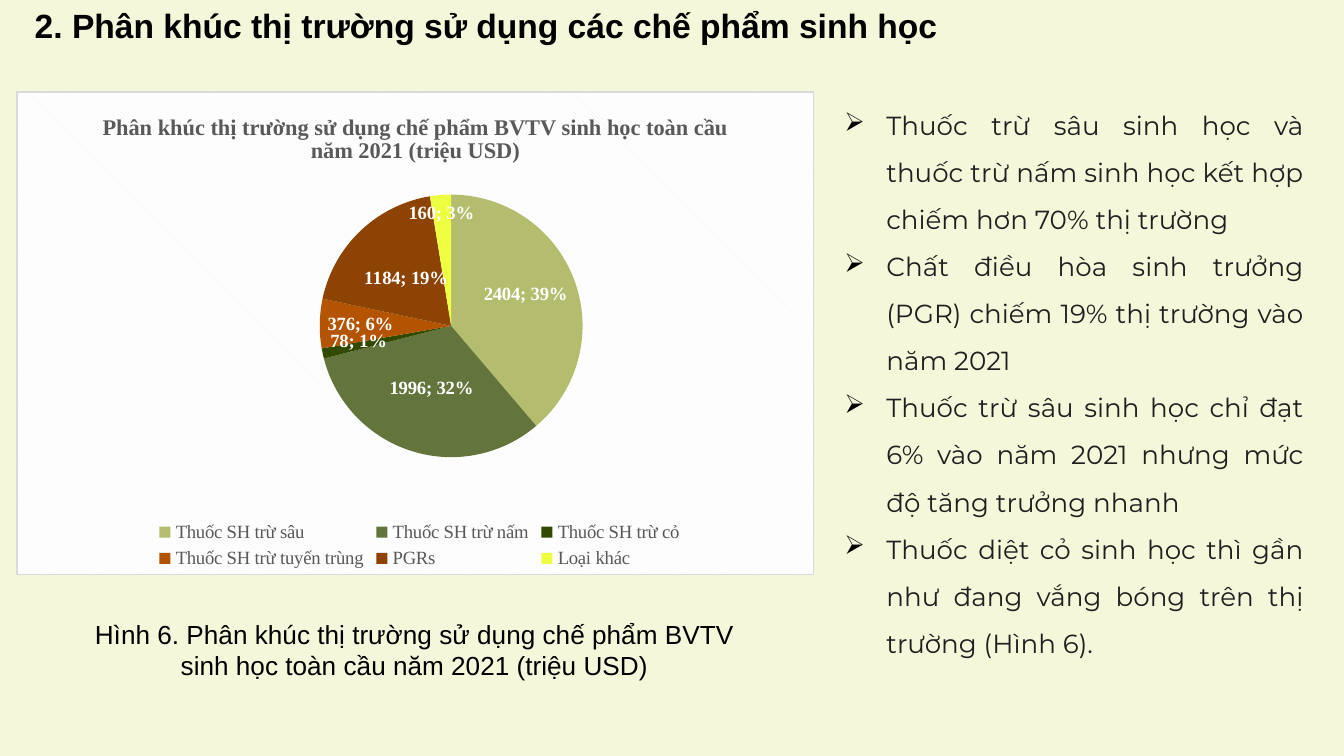
from lxml import etree
from pptx import Presentation
from pptx import util as u
from pptx.chart.data import CategoryChartData
from pptx.dml.color import RGBColor
from pptx.enum import chart as charts
from pptx.enum import text
from pptx.oxml import parse_xml
from pptx.oxml.ns import nsdecls, qn

SERIF = "Times New Roman"
SEGMENTS = [
    ("Thuốc SH trừ sâu", 2404, "B4BD6E"),
    ("Thuốc SH trừ nấm", 1996, "63753C"),
    ("Thuốc SH trừ cỏ", 78, "324A00"),
    ("Thuốc SH trừ tuyến trùng", 376, "B45400"),
    ("PGRs", 1184, "8C4303"),
    ("Loại khác", 160, "EEFF41"),
]
CENTRED_LABELS = (1, 4)
FINDINGS = [
    "Thuốc trừ sâu sinh học và thuốc trừ nấm sinh học kết hợp chiếm hơn 70% thị trường",
    "Chất điều hòa sinh trưởng (PGR) chiếm 19% thị trường vào năm 2021",
    "Thuốc trừ sâu sinh học chỉ đạt 6% vào năm 2021 nhưng mức độ tăng trưởng nhanh",
    "Thuốc diệt cỏ sinh học thì gần như đang vắng bóng trên thị trường (Hình 6).",
]


def colour(value):
    """Turn a hex string into a colour."""
    return RGBColor.from_string(value)


def style(font, name, size, value, bold=False):
    """Set the face, size, colour and weight of a font."""
    font.name, font.size, font.bold = name, u.Pt(size), bold
    font.color.rgb = colour(value)


def add_text_box(page, left, top, width, height):
    """Add a wrapping text box and return its text frame."""
    box = page.shapes.add_textbox(u.Pt(left), u.Pt(top), u.Pt(width), u.Pt(height))
    frame = box.text_frame
    frame.word_wrap = True
    frame.auto_size = text.MSO_AUTO_SIZE.SHAPE_TO_FIT_TEXT
    return frame


def add_line(page, left, top, width, height, words, size, align, bold=False):
    """Add a text box that holds one paragraph."""
    para = add_text_box(page, left, top, width, height).paragraphs[0]
    para.alignment = align
    span = para.add_run()
    span.text = words
    style(span.font, "Arial", size, "000000", bold)


def add_findings(page, left, top, width, height):
    """Add the justified list with arrow bullets."""
    frame = add_text_box(page, left, top, width, height)
    for index, words in enumerate(FINDINGS):
        para = frame.add_paragraph() if index else frame.paragraphs[0]
        para.alignment = text.PP_ALIGN.JUSTIFY
        para.line_spacing = 1.5
        props = para._p.get_or_add_pPr()
        props.set("marL", str(u.Pt(31.5)))
        props.set("indent", str(u.Pt(-22.5)))
        mark = etree.SubElement(props, qn("a:buClr"))
        etree.SubElement(mark, qn("a:srgbClr"), val="000000")
        etree.SubElement(props, qn("a:buChar"), char="➢")
        span = para.add_run()
        span.text = words
        style(span.font, "Montserrat", 14, "1F1F1F")


def manual_layout(x, y, width, height, inner=False):
    """Build a chart layout from fractions of the chart area."""
    target = '<c:layoutTarget val="inner"/>' if inner else ""
    return parse_xml(
        f'<c:layout {nsdecls("c")}><c:manualLayout>{target}'
        '<c:xMode val="edge"/><c:yMode val="edge"/>'
        f'<c:x val="{x}"/><c:y val="{y}"/><c:w val="{width}"/><c:h val="{height}"/>'
        "</c:manualLayout></c:layout>"
    )


def label_segments(series):
    """Show value and share on each segment."""
    labels = series.data_labels
    labels.position = charts.XL_LABEL_POSITION.INSIDE_END
    style(labels.font, SERIF, 10, "FFFFFF", True)
    for index in CENTRED_LABELS:
        label = series.points[index].data_label
        label.position = charts.XL_LABEL_POSITION.CENTER
        style(label.font, SERIF, 10, "FFFFFF", True)
    for name in ("c:showVal", "c:showPercent"):
        for flag in series._element.iter(qn(name)):
            flag.set("val", "1")
    for flag in list(series._element.iter(qn("c:showBubbleSize"))):
        flag.addnext(parse_xml(f'<c:separator {nsdecls("c")}>; </c:separator>'))


def add_segment_chart(page, left, top, width, height):
    """Add the pie chart of market segments."""
    data = CategoryChartData()
    data.categories = [name for name, _, _ in SEGMENTS]
    data.add_series("Series 1", [value for _, value, _ in SEGMENTS])
    chart = page.shapes.add_chart(
        charts.XL_CHART_TYPE.PIE,
        u.Pt(left), u.Pt(top), u.Pt(width), u.Pt(height), data,
    ).chart
    style(chart.font, SERIF, 10, "000000")

    chart.has_title = True
    span = chart.chart_title.text_frame.paragraphs[0].add_run()
    span.text = "Phân khúc thị trường sử dụng chế phẩm BVTV sinh học toàn cầu năm 2021 (triệu USD)"
    style(span.font, SERIF, 12, "595959", True)

    chart.has_legend = True
    legend = chart.legend
    legend.position = charts.XL_LEGEND_POSITION.BOTTOM
    legend.include_in_layout = False
    style(legend.font, SERIF, 10, "595959")
    for old in legend._element.findall(qn("c:layout")):
        legend._element.remove(old)
    legend._element.find(qn("c:legendPos")).addnext(manual_layout(0.17, 0.88, 0.67, 0.12))

    plot = chart.plots[0]
    plot.vary_by_categories = True
    series = plot.series[0]
    for index, (_, _, value) in enumerate(SEGMENTS):
        fill = series.points[index].format.fill
        fill.solid()
        fill.fore_color.rgb = colour(value)
    label_segments(series)

    root = chart._chartSpace
    area = root.find(".//" + qn("c:plotArea"))
    for old in area.findall(qn("c:layout")):
        area.remove(old)
    area.insert(0, manual_layout(0.38, 0.21, 0.33, 0.55, inner=True))
    root.find(qn("c:chart")).addnext(parse_xml(
        f'<c:spPr {nsdecls("c", "a")}><a:pattFill prst="dkDnDiag">'
        '<a:fgClr><a:srgbClr val="F2F2F2"/></a:fgClr>'
        '<a:bgClr><a:srgbClr val="FFFFFF"/></a:bgClr></a:pattFill>'
        f'<a:ln w="{u.Pt(0.75)}"><a:solidFill><a:srgbClr val="D9D9D9"/></a:solidFill></a:ln>'
        "</c:spPr>"
    ))


def main():
    """Build the market segment slide and save it."""
    deck = Presentation()
    deck.slide_width, deck.slide_height = u.Pt(720), u.Pt(405)
    page = deck.slides.add_slide(deck.slide_layouts[6])
    page.background.fill.solid()
    page.background.fill.fore_color.rgb = colour("F4F7DA")
    add_line(page, 11.5, -0.7, 502, 29,
             "2. Phân khúc thị trường sử dụng các chế phẩm sinh học",
             18, text.PP_ALIGN.JUSTIFY, True)
    add_segment_chart(page, 8.8, 49, 427.5, 259)
    add_line(page, 32.4, 327.6, 379.4, 41,
             "Hình 6. Phân khúc thị trường sử dụng chế phẩm BVTV sinh học toàn cầu năm 2021 (triệu USD)",
             14, text.PP_ALIGN.CENTER)
    add_findings(page, 436.3, 46.8, 269.3, 309.6)
    deck.save("out.pptx")


if __name__ == "__main__":
    main()
